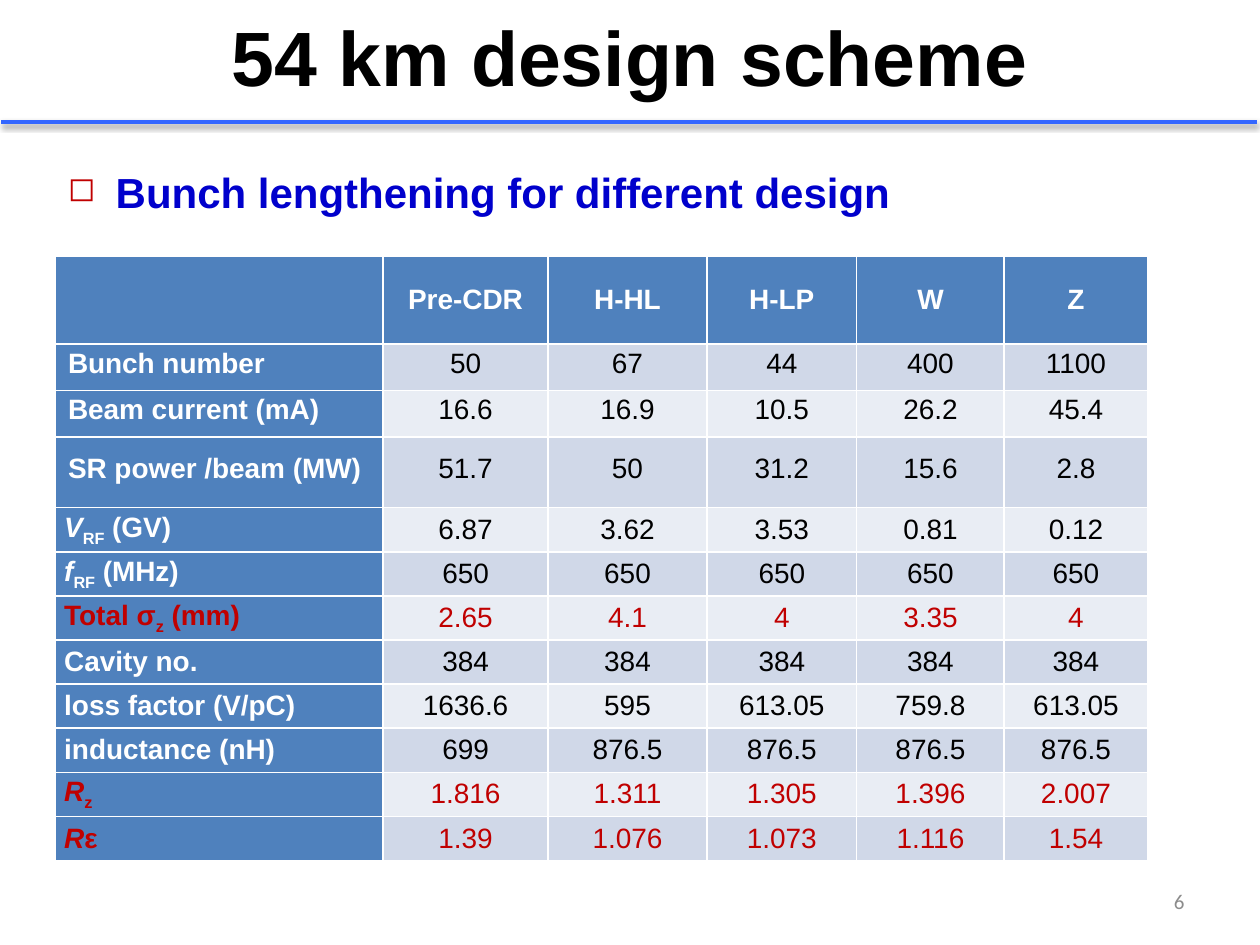
"""Build the slide on bunch lengthening in the 54 km design scheme."""
import pptx
import pptx.util
import pptx.dml.color
import pptx.enum.text
import pptx.enum.shapes
import pptx.oxml
import pptx.oxml.ns

HEX = {"head": "4F81BD", "odd": "D0D8E8", "even": "E9EDF4", "white": "FFFFFF",
       "black": "000000", "red": "C00000", "blue": "0000CC", "rule": "3366FF",
       "grey": "8C8C8C"}
TITLE = "54 km design scheme"
POINT = "Bunch lengthening for different design"
PAGE = "6"
COLS = [2.6, 1.31, 1.26, 1.19, 1.17, 1.14]
HIGH = [0.7, 0.37, 0.37, 0.56] + [0.35] * 8
HEADS = ["", "Pre-CDR", "H-HL", "H-LP", "W", "Z"]
ROWS = [
    ([("Bunch number", "")], ["50", "67", "44", "400", "1100"]),
    ([("Beam current (mA)", "")], ["16.6", "16.9", "10.5", "26.2", "45.4"]),
    ([("SR power /beam (MW)", "")], ["51.7", "50", "31.2", "15.6", "2.8"]),
    ([("V", "ital"), ("RF", "sub"), (" (GV)", "")],
     ["6.87", "3.62", "3.53", "0.81", "0.12"]),
    ([("f", "ital"), ("RF", "sub"), (" (MHz)", "")], ["650"] * 5),
    ([("Total σ", ""), ("z", "sub"), (" (mm)", "")],
     ["2.65", "4.1", "4", "3.35", "4"]),
    ([("Cavity no.", "")], ["384"] * 5),
    ([("loss factor (V/pC)", "")],
     ["1636.6", "595", "613.05", "759.8", "613.05"]),
    ([("inductance (nH)", "")], ["699"] + ["876.5"] * 4),
    ([("R", "ital"), ("z", "sub")],
     ["1.816", "1.311", "1.305", "1.396", "2.007"]),
    ([("R", "ital"), ("ε", "")], ["1.39", "1.076", "1.073", "1.116", "1.54"]),
]
RED = {6, 10, 11}
TIGHT = {1, 2, 3}

Inches, Pt = pptx.util.Inches, pptx.util.Pt
ALIGN = pptx.enum.text.PP_ALIGN
MIDDLE = pptx.enum.text.MSO_ANCHOR.MIDDLE


def rgb(name):
    return pptx.dml.color.RGBColor.from_string(HEX[name])


def add_xml(node, text):
    spot = text.index(">") - (text[text.index(">") - 1] == "/")
    node.append(pptx.oxml.parse_xml(
        text[:spot] + " " + pptx.oxml.ns.nsdecls("a") + text[spot:]))


def apply(item, form):
    for key, value in form.items():
        setattr(item, key, value)


def write(para, runs, size, color, bold=False, align=None, face="Arial"):
    para.alignment = align
    for text, kind in runs:
        run = para.add_run()
        run.text = text
        apply(run.font, {"size": Pt(size), "name": face, "bold": bold,
                         "italic": kind == "ital"})
        run.font.color.rgb = rgb(color)
        if kind == "sub":
            run._r.get_or_add_rPr().set("baseline", "-25000")


def place(shape, *box):
    apply(shape, dict(zip(("left", "top", "width", "height"), map(Inches, box))))


def add_rule(slide):
    line = slide.shapes.add_connector(
        pptx.enum.shapes.MSO_CONNECTOR.STRAIGHT,
        Inches(0.01), Inches(0.97), Inches(9.98), Inches(0.97))
    line.line.color.rgb = rgb("rule")
    line.line.width = Pt(2)
    add_xml(line._element.spPr,
            '<a:effectLst><a:outerShdw blurRad="39400" dist="20300" dir="5400000" '
            'rotWithShape="0"><a:srgbClr val="000000"><a:alpha val="38000"/>'
            '</a:srgbClr></a:outerShdw></a:effectLst>')


def add_point(slide):
    frame = slide.shapes.add_textbox(*map(Inches, (0.44, 1.07, 9.06, 0.63))).text_frame
    frame.word_wrap = True
    para = frame.paragraphs[0]
    write(para, [(POINT, "")], 24, "blue", True)
    para.line_spacing = 1.5
    prop = para._p.get_or_add_pPr()
    prop.set("marL", str(Inches(0.38)))
    prop.set("indent", str(-Inches(0.38)))
    for text in (f'<a:buClr><a:srgbClr val="{HEX["red"]}"/></a:buClr>',
                 '<a:buSzPct val="80000"/>', '<a:buChar char="◻"/>'):
        add_xml(prop, text)


def add_grid(slide):
    cells = [[[(head, "")] if head else [] for head in HEADS]]
    cells += [[label] + [[(value, "")] for value in values] for label, values in ROWS]
    grid = slide.shapes.add_table(len(HIGH), len(COLS), *map(
        Inches, (0.44, 2.03, sum(COLS), sum(HIGH)))).table
    grid.first_col = True
    for col, width in zip(grid.columns, COLS):
        col.width = Inches(width)
    for row, height in zip(grid.rows, HIGH):
        row.height = Inches(height)
    for r, line in enumerate(cells):
        for c, runs in enumerate(line):
            cell = grid.cell(r, c)
            lead = r == 0 or c == 0
            apply(cell, {"margin_left": Inches(0.07), "margin_right": Inches(0.07),
                         "margin_top": 0, "margin_bottom": 0,
                         "vertical_anchor": MIDDLE})
            cell.fill.solid()
            cell.fill.fore_color.rgb = rgb("head" if lead else "odd" if r % 2 else "even")
            para = cell.text_frame.paragraphs[0]
            color = "red" if r in RED else "white" if lead else "black"
            align = ALIGN.CENTER if c or r == 0 else ALIGN.JUSTIFY
            write(para, runs, 16, color, lead, align)
            if r in TIGHT:
                para.line_spacing = Pt(13.7)
                if c == 0:
                    para._p.get_or_add_pPr().set("marL", str(Inches(0.03)))


def main():
    deck = pptx.Presentation()
    deck.slide_width, deck.slide_height = Inches(10), Inches(7.5)
    slide = deck.slides.add_slide(deck.slide_layouts[5])
    add_rule(slide)
    title = slide.shapes.title
    place(title, 0, -0.03, 10, 0.94)
    title.text_frame.vertical_anchor = MIDDLE
    write(title.text_frame.paragraphs[0], [(TITLE, "")], 44, "black", True, ALIGN.CENTER)
    page = slide.shapes.add_textbox(*map(Inches, (7.17, 6.95, 2.33, 0.4))).text_frame
    apply(page, {"word_wrap": True, "vertical_anchor": MIDDLE})
    write(page.paragraphs[0], [(PAGE, "")], 12, "grey", False, ALIGN.RIGHT, "Calibri")
    add_grid(slide)
    add_point(slide)
    deck.save("out.pptx")


if __name__ == "__main__":
    main()
